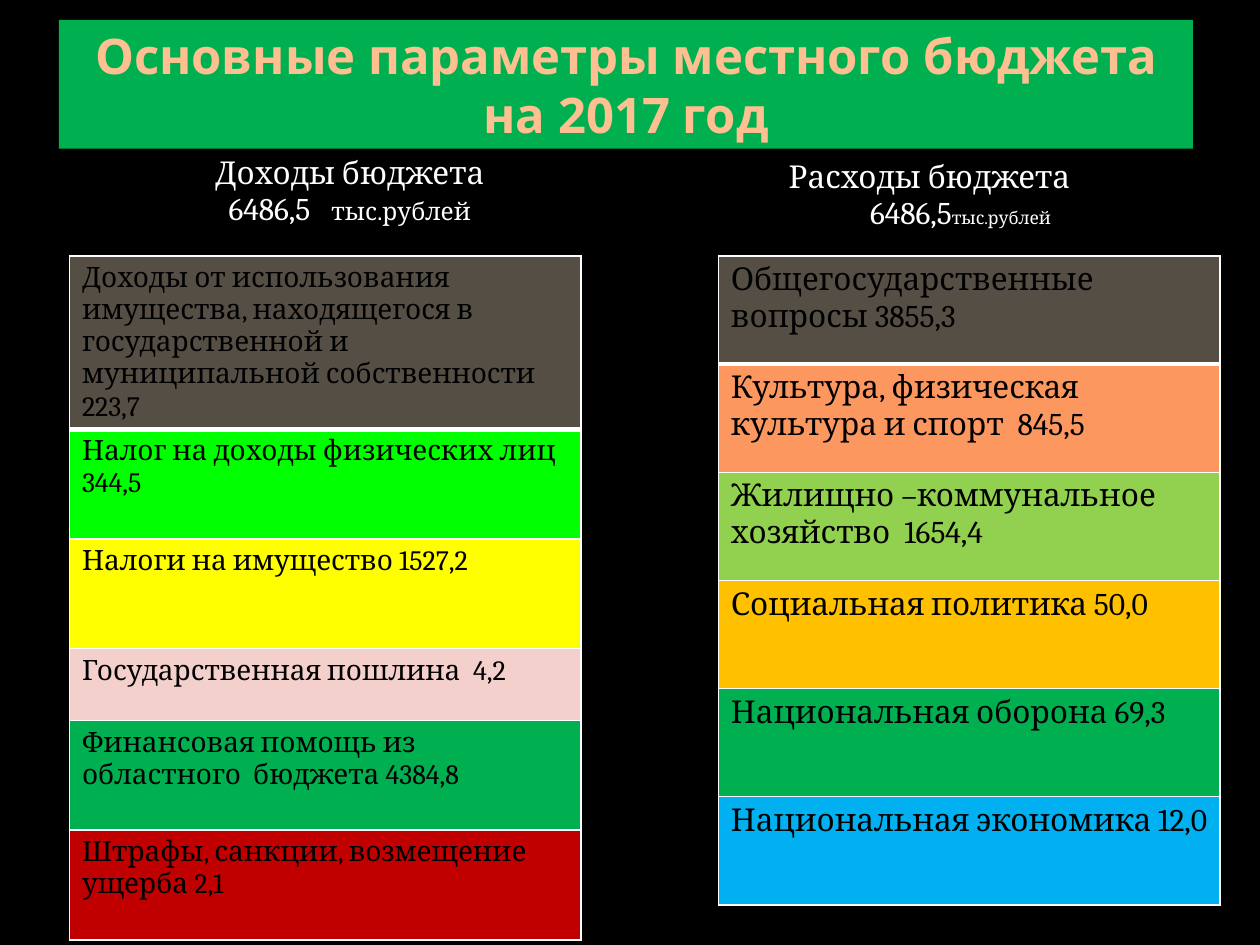
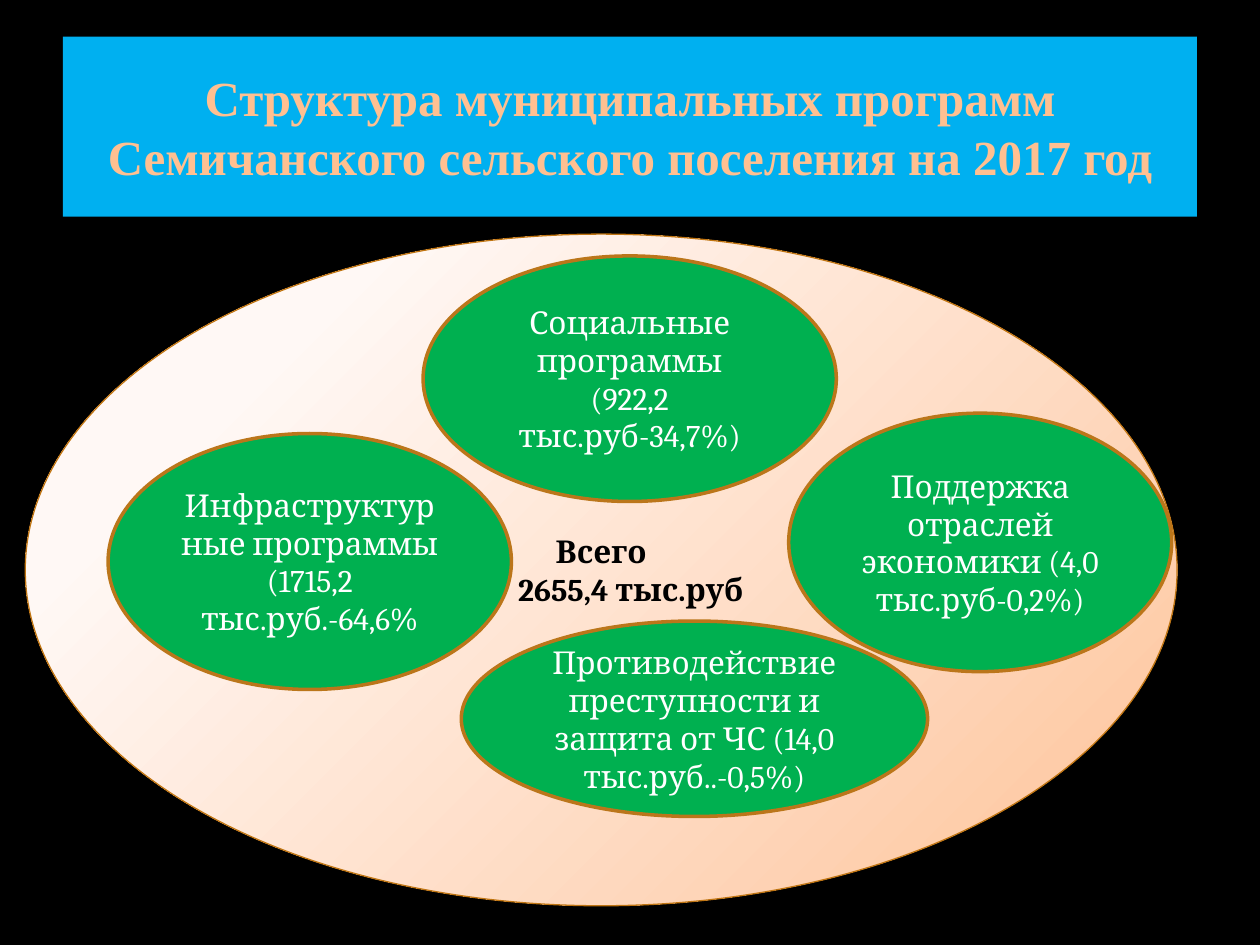
from lxml import etree
from pptx import Presentation
from pptx.dml.color import RGBColor
from pptx.enum.shapes import MSO_SHAPE
from pptx.enum.text import MSO_ANCHOR, PP_ALIGN
from pptx.oxml.ns import qn
from pptx.util import Cm, Pt

RECT, OVAL = MSO_SHAPE.RECTANGLE, MSO_SHAPE.OVAL
CENTER, LEFT = PP_ALIGN.CENTER, PP_ALIGN.LEFT
MIDDLE = MSO_ANCHOR.MIDDLE
BODY_FONT = "Cambria"
COLORS = {
    "black": "000000", "white": "FFFFFF", "title": "FFC091",
    "green": "00B050", "blue": "00B0F0", "brown": "554E45",
    "lime": "00FF00", "yellow": "FFFF00", "pink": "F4D0CC",
    "red": "C00000", "orange": "FC9760", "light_green": "92D050",
    "amber": "FFC000", "cream": "FFF8F5", "peach": "FEC399",
    "oval_line": "BB761A", "total_line": "C07512",
}

INCOME = [
    ("Доходы от использования имущества, находящегося в государственной и "
     "муниципальной собственности 223,7", "brown", 2.21),
    ("Налог на доходы физических лиц 344,5", "lime", 2.21),
    ("Налоги на имущество 1527,2", "yellow", 2.21),
    ("Государственная пошлина  4,2", "pink", 1.45),
    ("Финансовая помощь из областного  бюджета 4384,8", "green", 2.21),
    ("Штрафы, санкции, возмещение ущерба 2,1", "red", 2.21),
]
EXPENSES = [
    ("Общегосударственные вопросы 3855,3", "brown", 2.18),
    ("Культура, физическая культура и спорт  845,5", "orange", 2.18),
    ("Жилищно –коммунальное хозяйство  1654,4", "light_green", 2.18),
    ("Социальная политика 50,0", "amber", 2.18),
    ("Национальная оборона 69,3", "green", 2.18),
    ("Национальная экономика 12,0", "blue", 2.18),
]
PROGRAMS = [
    ("Социальные программы (922,2 тыс.руб-34,7%)", 8.53, 5.16, 8.33, 4.95),
    ("Инфраструктурные программы (1715,2 тыс.руб.-64,6%", 2.18, 8.74, 8.13, 5.16),
    ("Поддержка отраслей экономики (4,0 тыс.руб-0,2%)", 15.9, 8.33, 7.72, 5.21),
    ("Противодействие преступности и защита от ЧС (14,0 тыс.руб..-0,5%)",
     9.3, 12.52, 9.4, 3.94),
]


def rgb(name):
    return RGBColor.from_string(COLORS[name])


def paint(target, color):
    target.fill.solid()
    target.fill.fore_color.rgb = rgb(color)


def style(p, size, color, font=BODY_FONT, bold=False, align=CENTER, indent=0):
    p.alignment = align
    p.font.size, p.font.name, p.font.bold = Pt(size), font, bold
    p.font.color.rgb = rgb(color)
    if indent:
        p._p.get_or_add_pPr().set("marL", str(Cm(indent)))


def add_slide(prs):
    slide = prs.slides.add_slide(prs.slide_layouts[6])
    paint(slide.background, "black")
    return slide


def add_block(slide, kind, box, fill=None, line=None, width=0):
    s = slide.shapes.add_shape(kind, *map(Cm, box))
    s.shadow.inherit = False
    if fill:
        paint(s, fill)
    if line:
        s.line.color.rgb = rgb(line)
        s.line.width = Pt(width)
    else:
        s.line.fill.background()
    s.text_frame.word_wrap = True
    s.text_frame.vertical_anchor = MIDDLE
    return s


def add_title(slide, text, box, fill, font):
    p = add_block(slide, RECT, box, fill).text_frame.paragraphs[0]
    p.text = text
    style(p, 28, "title", font, bold=True)


def add_border(cell, side, width):
    """Draw one cell edge in white, or hide it when width is 0."""
    ln = etree.SubElement(cell._tc.get_or_add_tcPr(), qn(f"a:ln{side}"), w=str(Pt(width)))
    if width:
        fill = etree.SubElement(ln, qn("a:solidFill"))
        etree.SubElement(fill, qn("a:srgbClr"), val=COLORS["white"])
    else:
        etree.SubElement(ln, qn("a:noFill"))


def add_column(slide, left, top, width, heights):
    """Add a one-column table without banding and return its cells."""
    table = slide.shapes.add_table(
        len(heights), 1, Cm(left), Cm(top), Cm(width), Cm(sum(heights))).table
    table.first_row = table.horz_banding = False
    for row, height in zip(table.rows, heights):
        row.height = Cm(height)
    return [row.cells[0] for row in table.rows]


def add_budget_heading(slide, box, heading, amount, unit_size, gap=0, indent=0):
    """Add a total; gap is the extra space in points before the unit."""
    left, top, width, height = box
    cell = add_column(slide, left, top, width, [height])[0]
    for side in "LRTB":
        add_border(cell, side, 0)
    cell.fill.background()
    tf = cell.text_frame
    tf.text = heading
    p = tf.add_paragraph()
    p.add_run().text = amount
    if gap:
        r = p.add_run()
        r.text = " "
        r._r.get_or_add_rPr().set("spc", str(gap * 100))
    r = p.add_run()
    r.text = "тыс.рублей"
    r.font.size = Pt(unit_size)
    style(tf.paragraphs[0], 18, "white")
    style(p, 18, "white", indent=indent)


def add_budget_table(slide, left, top, width, items, size):
    cells = add_column(slide, left, top, width, [item[2] for item in items])
    for i, (cell, (text, color, _)) in enumerate(zip(cells, items)):
        edges = {"L": 1, "R": 1, "T": 3 if i == 1 else 1, "B": 3 if i == 0 else 1}
        for side, weight in edges.items():
            add_border(cell, side, weight)
        paint(cell, color)
        p = cell.text_frame.paragraphs[0]
        p.text = text
        style(p, size, "black", align=LEFT)


def add_corner_glow(s, inner, outer):
    """Fill with a circular gradient centred beyond the top left corner."""
    s.fill.gradient()
    for stop, color, position in zip(s.fill.gradient_stops, (inner, outer), (0.2, 1)):
        stop.color.rgb = rgb(color)
        stop.position = position
    grad = s._element.spPr.find(qn("a:gradFill"))
    grad.remove(grad.find(qn("a:lin")))
    circle = etree.SubElement(grad, qn("a:path"), {"path": "circle"})
    etree.SubElement(circle, qn("a:fillToRect"),
                     l="-15000", t="-15000", r="115000", b="115000")


def add_total_oval(slide):
    s = add_block(slide, OVAL, (0.51, 4.72, 23.22, 13.54), line="total_line", width=0.75)
    add_corner_glow(s, "cream", "peach")
    s.text_frame.text = "Всего\n2655,4 тыс.руб"
    for p, indent in zip(s.text_frame.paragraphs, (0, 1.2)):
        style(p, 18, "black", bold=True, indent=indent)


def add_program_oval(slide, text, *box):
    s = add_block(slide, OVAL, box, "green", "oval_line", 2)
    p = s.text_frame.paragraphs[0]
    p.text = text
    style(p, 18, "white")


def build_budget_slide(prs):
    slide = add_slide(prs)
    add_title(slide, "Основные параметры местного бюджета на 2017 год",
              (1.19, 0.4, 22.86, 2.6), "green", "Noto Sans")
    add_budget_heading(slide, (1.32, 3.02, 11.46, 1.96), "Доходы бюджета",
                       "6486,5", 14, gap=8)
    add_budget_heading(slide, (13.06, 3.1, 11.35, 1.93), "Расходы бюджета",
                       "6486,5", 10, indent=1.25)
    add_budget_table(slide, 1.4, 5.16, 10.31, INCOME, 16)
    add_budget_table(slide, 14.48, 5.16, 10.11, EXPENSES, 18)


def build_programs_slide(prs):
    slide = add_slide(prs)
    add_title(slide, "Структура муниципальных программ Семичанского сельского "
              "поселения на 2017 год", (1.27, 0.74, 22.86, 3.63), "blue",
              "Times New Roman")
    add_total_oval(slide)
    for program in PROGRAMS:
        add_program_oval(slide, *program)


def main():
    prs = Presentation()
    prs.slide_width, prs.slide_height = Cm(25.4), Cm(19.05)
    build_budget_slide(prs)
    build_programs_slide(prs)
    prs.save("out.pptx")


if __name__ == "__main__":
    main()
